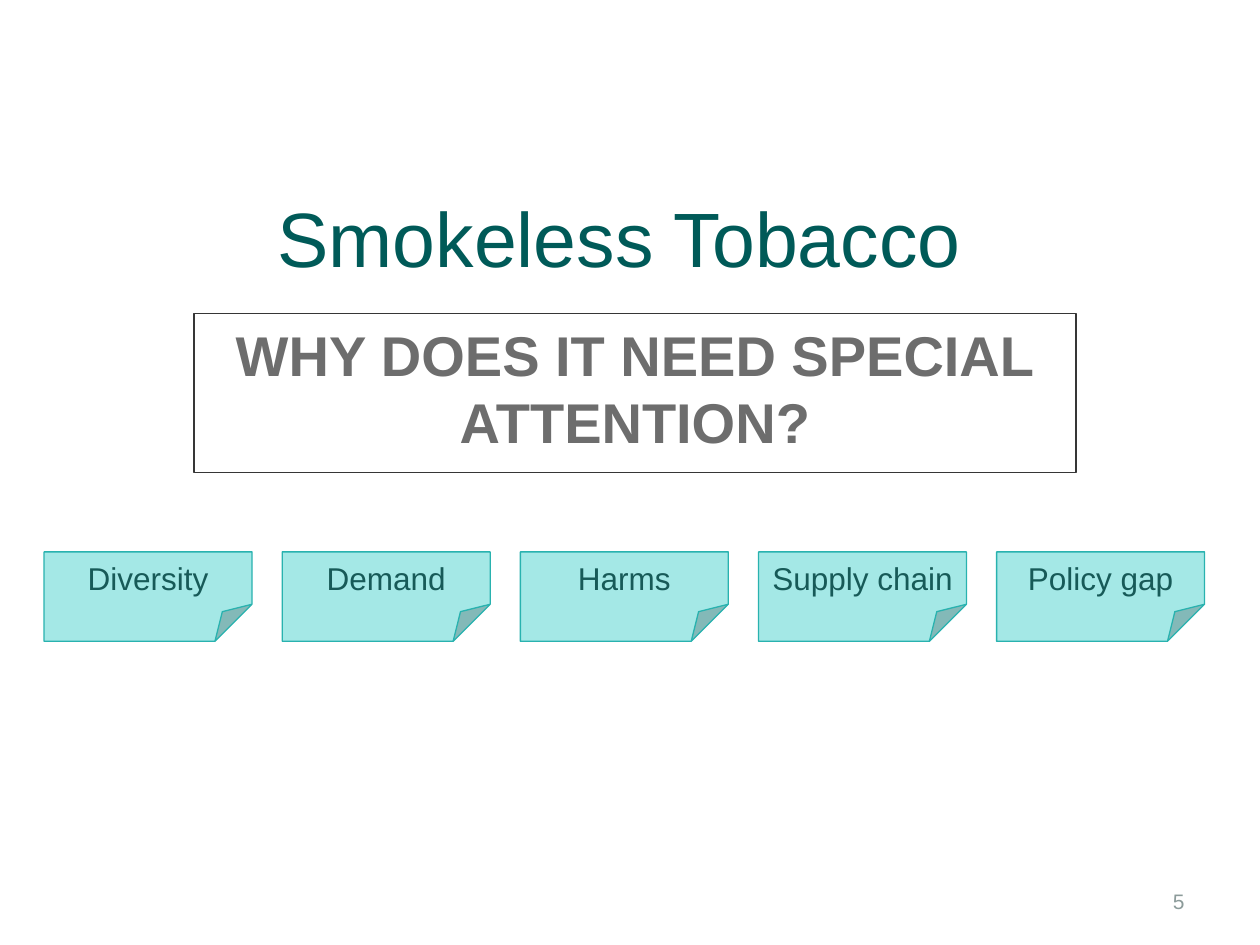
"""Build the smokeless tobacco section slide."""
import dataclasses

import pptx
import pptx.dml.color
import pptx.enum.shapes
import pptx.enum.text
import pptx.oxml
import pptx.oxml.ns
import pptx.util

Inches = pptx.util.Inches
Pt = pptx.util.Pt
RGB = pptx.dml.color.RGBColor
Align = pptx.enum.text.PP_ALIGN
Anchor = pptx.enum.text.MSO_ANCHOR

TEAL = RGB(0x00, 0x5A, 0x58)
GREY = RGB(0x6D, 0x6D, 0x6D)
EDGE = RGB(0x36, 0x36, 0x36)
PALE = RGB(0x8C, 0x9B, 0x9A)
MINT = RGB(0xA4, 0xE8, 0xE6)
RIM = RGB(0x29, 0xB2, 0xAF)
DARK = RGB(0x17, 0x5A, 0x58)

SPACE = pptx.oxml.ns.nsdecls("a")
NOTES = ("Diversity", "Demand", "Harms", "Supply chain", "Policy gap")
LEFT, STEP = 0.35, 1.89


@dataclasses.dataclass(frozen=True)
class Style:
    """Describe how one line of text looks."""
    size: int
    color: RGB
    align: Align = Align.CENTER
    anchor: Anchor = Anchor.MIDDLE
    bold: bool = False


HEAD = Style(44, TEAL)
SUB = Style(32, GREY, anchor=Anchor.TOP, bold=True)
PAGE = Style(12, PALE, Align.RIGHT)
NOTE = Style(18, DARK)


def place(shape, left: float, top: float, width: float, height: float) -> None:
    """Move and size a shape in inches."""
    shape.left, shape.top = Inches(left), Inches(top)
    shape.width, shape.height = Inches(width), Inches(height)


def write(shape, text: str, style: Style):
    """Put one styled run in a shape and return it."""
    frame = shape.text_frame
    frame.word_wrap = True
    frame.auto_size = pptx.enum.text.MSO_AUTO_SIZE.NONE
    frame.vertical_anchor = style.anchor
    para = frame.paragraphs[0]
    para.alignment = style.align
    para.space_before = Pt(0)
    run = para.add_run()
    run.text = text
    run.font.name = "Arial"
    run.font.size = Pt(style.size)
    run.font.bold = style.bold
    run.font.color.rgb = style.color
    return run


def outline(run, color: str, width: float) -> None:
    """Give the letters of a run a thin outline."""
    line = pptx.oxml.parse_xml(
        f'<a:ln {SPACE} w="{int(Pt(width))}"><a:solidFill>'
        f'<a:srgbClr val="{color}"/></a:solidFill></a:ln>'
    )
    run.font._element.insert(0, line)


def border(shape, color: RGB) -> None:
    """Draw a thin line round a shape."""
    shape.line.color.rgb = color
    shape.line.width = Pt(0.75)


def fold(shape, size: int) -> None:
    """Set how far the corner of a note folds."""
    guide = pptx.oxml.parse_xml(
        f'<a:gd {SPACE} name="adj" fmla="val {size}"/>'
    )
    path = ".//" + pptx.oxml.ns.qn("a:avLst")
    shape._element.find(path).append(guide)


def add_note(slide, left: float, text: str) -> None:
    """Add one folded note."""
    kind = pptx.enum.shapes.MSO_SHAPE.FOLDED_CORNER
    note = slide.shapes.add_shape(
        kind, Inches(left), Inches(4.38), Inches(1.65), Inches(0.71)
    )
    fold(note, 41400)
    note.shadow.inherit = False
    note.fill.solid()
    note.fill.fore_color.rgb = MINT
    border(note, RIM)
    write(note, text, NOTE)


def main() -> None:
    """Build and save the slide."""
    deck = pptx.Presentation()
    deck.slide_width, deck.slide_height = Inches(10), Inches(7.5)
    slide = deck.slides.add_slide(deck.slide_layouts[0])

    title = slide.shapes.title
    place(title, 0.75, 1.07, 8.5, 1.61)
    write(title, "Smokeless Tobacco ", HEAD)

    sub = slide.placeholders[1]
    place(sub, 1.54, 2.49, 7, 1.26)
    border(sub, EDGE)
    run = write(sub, "WHY DOES IT NEED SPECIAL ATTENTION?", SUB)
    outline(run, "A1A1A1", 0.71)

    page = slide.shapes.add_textbox(
        Inches(7.17), Inches(6.95), Inches(2.33), Inches(0.4)
    )
    write(page, "5", PAGE)

    for index, text in enumerate(NOTES):
        add_note(slide, LEFT + index * STEP, text)

    deck.save("out.pptx")


if __name__ == "__main__":
    main()
